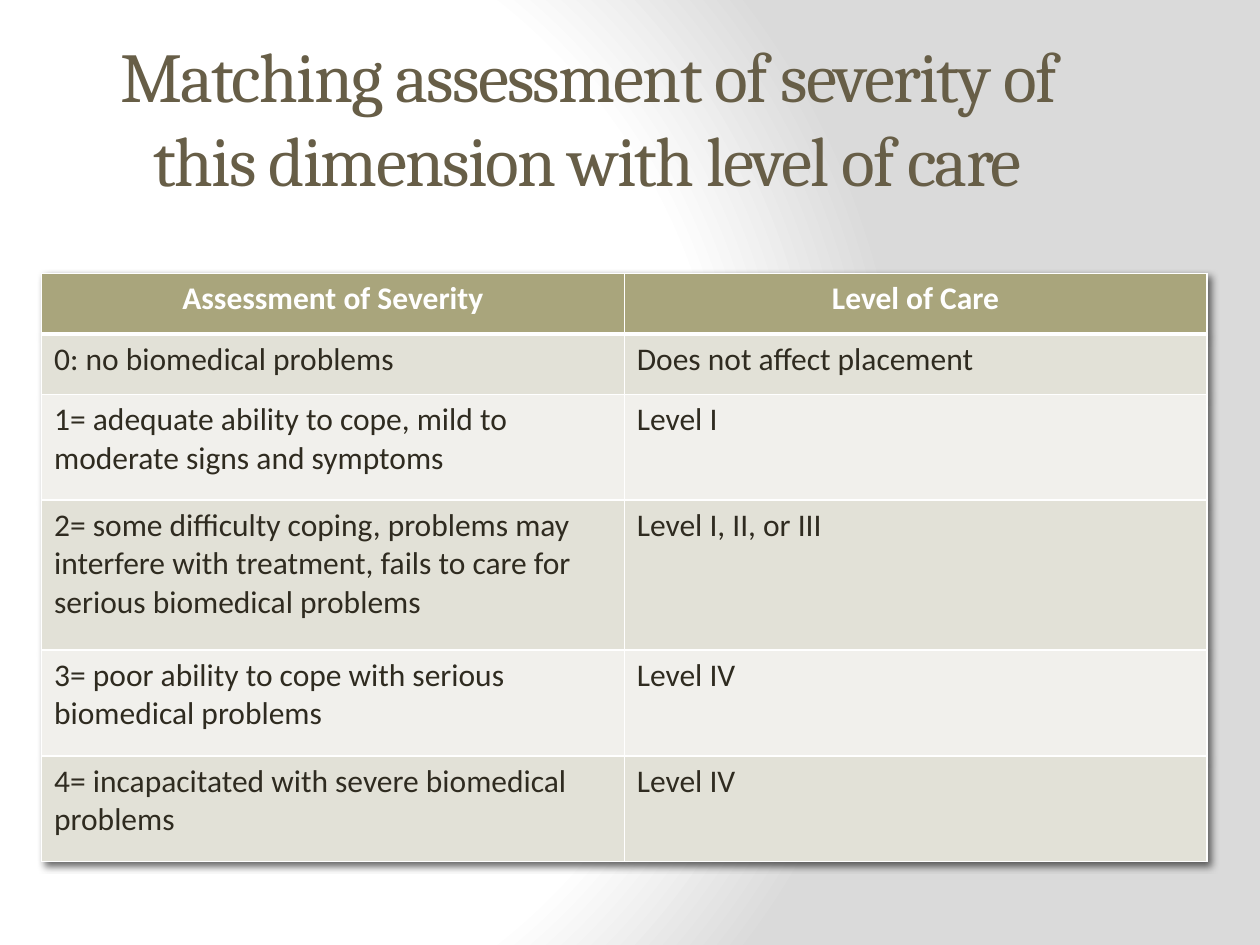
from lxml import etree
from pptx import Presentation
from pptx.dml.color import RGBColor
from pptx.enum.text import MSO_ANCHOR, PP_ALIGN
from pptx.oxml import parse_xml
from pptx.oxml.ns import nsdecls, qn
from pptx.util import Inches, Pt

CENTER, LEFT = PP_ALIGN.CENTER, PP_ALIGN.LEFT
MIDDLE = MSO_ANCHOR.MIDDLE

WHITE = RGBColor(0xFF, 0xFF, 0xFF)
GRAY = RGBColor(0xDA, 0xDA, 0xDA)
BROWN = RGBColor(0x67, 0x5E, 0x47)
INK = RGBColor(0x2F, 0x2B, 0x20)
OLIVE = RGBColor(0xA9, 0xA5, 0x7C)
BANDS = [RGBColor(0xE2, 0xE1, 0xD7), RGBColor(0xF1, 0xF0, 0xEC)]

ROWS = [
    ("Assessment of Severity", "Level of Care"),
    ("0: no biomedical problems", "Does not affect placement"),
    ("1= adequate ability to cope, mild to moderate signs and symptoms", "Level I"),
    ("2= some difficulty coping, problems may interfere with treatment, "
     "fails to care for serious biomedical problems", "Level I, II, or III"),
    ("3= poor ability to cope with serious biomedical problems", "Level IV"),
    ("4= incapacitated with severe biomedical problems", "Level IV"),
]
ROW_HEIGHTS = [0.48, 0.48, 0.84, 1.19, 0.84, 0.84]
TABLE_WIDTH = 9.25


def set_borders(cell, bottom_width):
    """Draw white lines on all four sides of a cell."""
    properties = cell._tc.get_or_add_tcPr()
    widths = {"lnL": 1, "lnR": 1, "lnT": 1, "lnB": bottom_width}
    for index, (side, width) in enumerate(widths.items()):
        line = etree.Element(qn(f"a:{side}"), w=str(Pt(width)))
        fill = etree.SubElement(line, qn("a:solidFill"))
        etree.SubElement(fill, qn("a:srgbClr"), val=str(WHITE))
        properties.insert(index, line)


deck = Presentation()
deck.slide_width, deck.slide_height = Inches(10), Inches(7.5)
page = deck.slides.add_slide(deck.slide_layouts[5])

# Background: radial gradient from white to gray
stops = "".join(
    f'<a:gs pos="{share * 1000}"><a:srgbClr val="{color}"/></a:gs>'
    for share, color in [(0, WHITE), (75, WHITE), (100, GRAY)]
)
page.background.fill.solid()
background = page.background._cSld.bg.bgPr
background.replace(background[0], parse_xml(
    f'<a:gradFill {nsdecls("a")} rotWithShape="1"><a:gsLst>{stops}</a:gsLst>'
    '<a:path path="circle">'
    '<a:fillToRect l="20000" t="50000" r="100000" b="50000"/>'
    '</a:path></a:gradFill>'
))

# Title
title = page.shapes.title
title.left, title.top = Inches(0.5), Inches(0.3)
title.width, title.height = Inches(8.33), Inches(1.25)
frame = title.text_frame
frame.text = "Matching assessment of severity of this dimension with level of care"
frame.word_wrap = True
frame.vertical_anchor = MIDDLE
para = frame.paragraphs[0]
para.alignment = CENTER
span = para.runs[0]
span.font.name, span.font.size = "Cambria", Pt(40)
span.font.color.rgb = BROWN
span.font._element.set("spc", "-100")

# Table with a soft shadow
table = page.shapes.add_table(
    len(ROWS), 2, Inches(0.33), Inches(2.17),
    Inches(TABLE_WIDTH), Inches(sum(ROW_HEIGHTS)),
).table
table._tbl.tblPr.insert(0, parse_xml(
    f'<a:effectLst {nsdecls("a")}>'
    '<a:outerShdw blurRad="50800" dist="38100" dir="2700000" algn="tl">'
    '<a:srgbClr val="000000"><a:alpha val="60000"/></a:srgbClr>'
    '</a:outerShdw></a:effectLst>'
))
for column in table.columns:
    column.width = Inches(TABLE_WIDTH / 2)

for row, (texts, height) in enumerate(zip(ROWS, ROW_HEIGHTS)):
    header = row == 0
    table.rows[row].height = Inches(height)
    for col, text in enumerate(texts):
        cell = table.cell(row, col)
        cell.text = text
        cell.fill.solid()
        cell.fill.fore_color.rgb = OLIVE if header else BANDS[(row - 1) % 2]
        set_borders(cell, 3 if header else 1)
        para = cell.text_frame.paragraphs[0]
        para.alignment = CENTER if header else LEFT
        para.font.name, para.font.size = "Calibri", Pt(18)
        para.font.bold = header
        para.font.color.rgb = WHITE if header else INK

deck.save("out.pptx")
